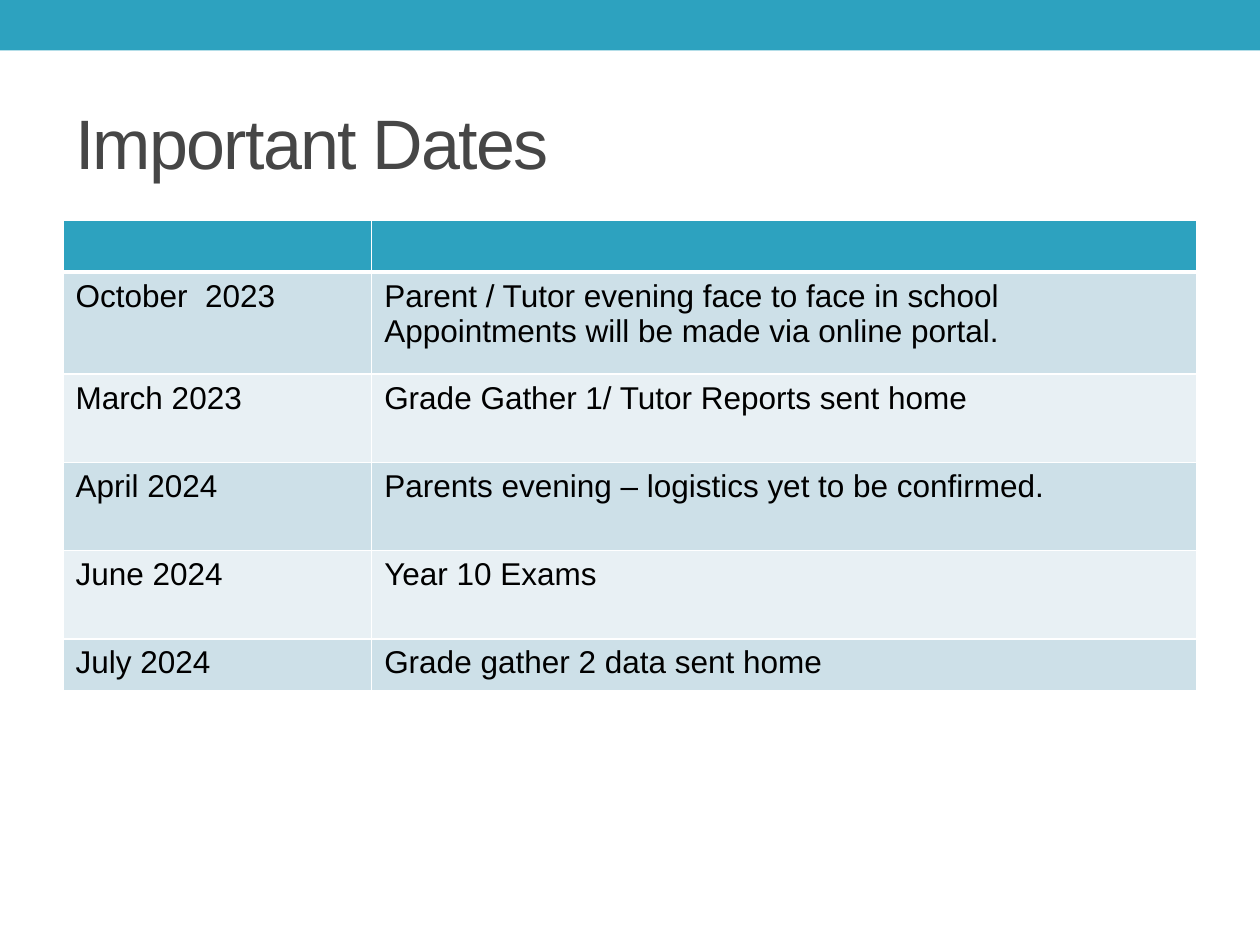
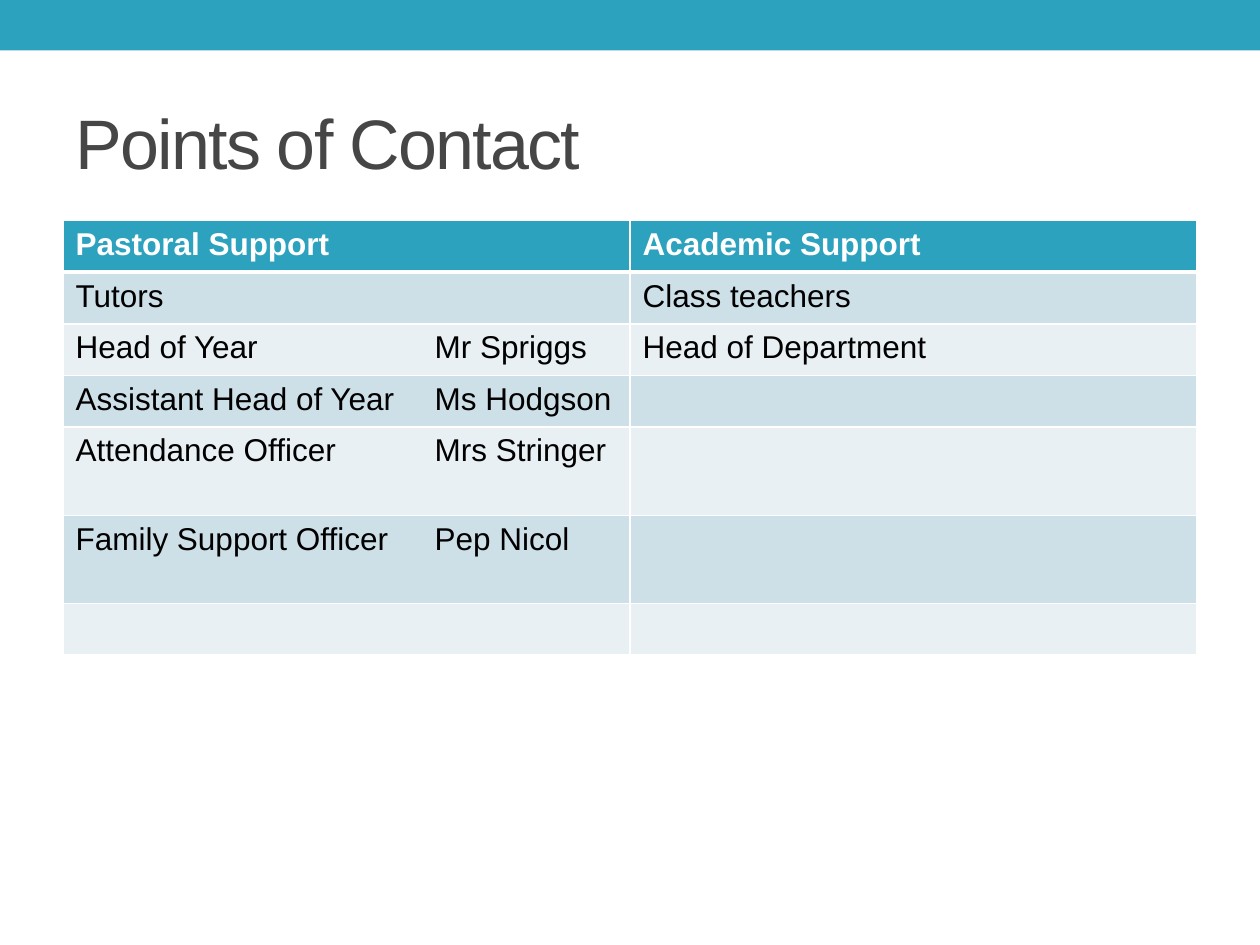
"""Build the important dates and points of contact slides."""
from lxml.etree import SubElement
from pptx import Presentation
from pptx.dml.color import RGBColor as Rgb
from pptx.enum.shapes import MSO_SHAPE as Shape
from pptx.enum.text import MSO_ANCHOR as Anchor
from pptx.oxml.ns import qn
from pptx.util import Inches, Pt

COLORS = {
    "accent": "2DA2BF",
    "title": "464646",
    "text": "000000",
    "white": "FFFFFF",
    "band_dark": "CDE0E8",
    "band_light": "E8F0F4",
}
FONT = "Arial"
NAME_TAB = 2.85
SHORT, MEDIUM, TALL = 0.41, 0.7, 0.81

SLIDES = [
    {
        "title": "Important Dates",
        "columns": [2.45, 6.55],
        "rows": [
            (SHORT, "", ""),
            (TALL, "October  2023",
             "Parent / Tutor evening face to face in school\n"
             "Appointments will be made via online portal."),
            (MEDIUM, "March 2023", "Grade Gather 1/ Tutor Reports sent home"),
            (MEDIUM, "April 2024", "Parents evening – logistics yet to be confirmed."),
            (MEDIUM, "June 2024", "Year 10 Exams"),
            (SHORT, "July 2024", "Grade gather 2 data sent home"),
        ],
    },
    {
        "title": "Points of Contact",
        "columns": [4.5, 4.5],
        "rows": [
            (SHORT, "Pastoral Support", "Academic Support"),
            (SHORT, "Tutors", "Class teachers"),
            (SHORT, "Head of Year\tMr Spriggs", "Head of Department"),
            (SHORT, "Assistant Head of Year\tMs Hodgson", ""),
            (MEDIUM, "Attendance Officer\tMrs Stringer", ""),
            (MEDIUM, "Family Support Officer\tPep Nicol", ""),
            (SHORT, "", ""),
        ],
    },
]


def write_text(frame, text, size=18, color="text", bold=False, spacing=0):
    for index, line in enumerate(text.split("\n")):
        para = frame.paragraphs[0] if index == 0 else frame.add_paragraph()
        if "\t" in line:
            stops = SubElement(para._p.get_or_add_pPr(), qn("a:tabLst"))
            SubElement(stops, qn("a:tab"), pos=str(Inches(NAME_TAB)), algn="l")
        if not line:
            para.font.size = Pt(size)
            continue
        span = para.add_run()
        span.text = line
        span.font.name = FONT
        span.font.size = Pt(size)
        span.font.bold = bold
        span.font.color.rgb = Rgb.from_string(COLORS[color])
        if spacing:
            span._r.get_or_add_rPr().set("spc", str(spacing * 100))


def add_borders(cell, top, bottom):
    properties = cell._tc.get_or_add_tcPr()
    for side, width in (("L", 1), ("R", 1), ("T", top), ("B", bottom)):
        line = SubElement(properties, qn(f"a:ln{side}"), w=str(Pt(width)))
        fill = SubElement(line, qn("a:solidFill"))
        SubElement(fill, qn("a:srgbClr"), val=COLORS["white"])


deck = Presentation()
deck.slide_width, deck.slide_height = Inches(10), Inches(7.5)

for content in SLIDES:
    page = deck.slides.add_slide(deck.slide_layouts[6])

    band = page.shapes.add_shape(Shape.RECTANGLE, 0, 0, deck.slide_width, Inches(0.4))
    band.shadow.inherit = False
    band.fill.solid()
    band.fill.fore_color.rgb = Rgb.from_string(COLORS["accent"])
    band.line.fill.background()

    box = page.shapes.add_textbox(Inches(0.5), Inches(0.58), Inches(9), Inches(1.08))
    box.text_frame.word_wrap = True
    box.text_frame.vertical_anchor = Anchor.MIDDLE
    write_text(box.text_frame, content["title"], size=40, color="title", spacing=-1)

    rows, columns = content["rows"], content["columns"]
    height = sum(row[0] for row in rows)
    table = page.shapes.add_table(len(rows), len(columns), Inches(0.5), Inches(1.75),
                                  Inches(9), Inches(height)).table
    for column, width in zip(table.columns, columns):
        column.width = Inches(width)

    for row_index, (row_height, *texts) in enumerate(rows):
        table.rows[row_index].height = Inches(row_height)
        header = row_index == 0
        shade = "accent" if header else "band_dark" if row_index % 2 else "band_light"
        for column_index, text in enumerate(texts):
            cell = table.cell(row_index, column_index)
            add_borders(cell, top=3 if row_index == 1 else 1, bottom=3 if header else 1)
            cell.fill.solid()
            cell.fill.fore_color.rgb = Rgb.from_string(COLORS[shade])
            write_text(cell.text_frame, text, color="white" if header else "text", bold=header)

deck.save("out.pptx")
